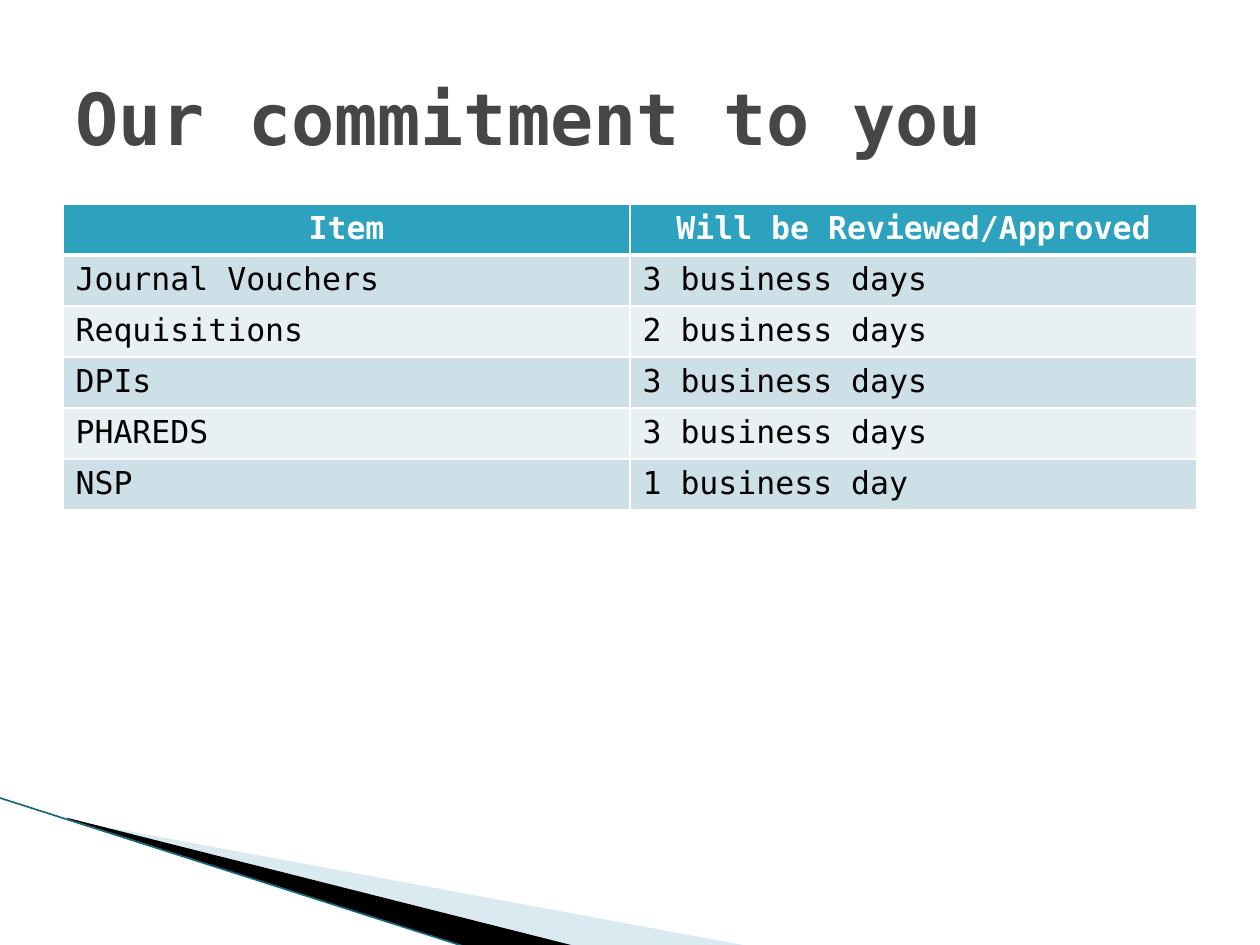
from dataclasses import dataclass

from lxml import etree
from pptx import Presentation
from pptx.dml.color import RGBColor
from pptx.enum.shapes import MSO_CONNECTOR
from pptx.enum.text import MSO_ANCHOR, PP_ALIGN
from pptx.oxml.ns import qn
from pptx.util import Inches, Pt

STRAIGHT = MSO_CONNECTOR.STRAIGHT
MIDDLE = MSO_ANCHOR.MIDDLE
CENTER = PP_ALIGN.CENTER
LEFT = PP_ALIGN.LEFT


@dataclass(frozen=True)
class Theme:
    font: str = "DejaVu Sans Mono"
    title_size: float = 41
    table_size: float = 18
    title: str = "464646"
    header: str = "2DA2BF"
    header_text: str = "FFFFFF"
    body_text: str = "000000"
    odd_row: str = "CDE0E8"
    even_row: str = "E8F0F4"
    border: str = "FFFFFF"
    light_wedge: str = "A0CBDC"
    dark_wedge: str = "000000"
    edge: str = "16697A"


THEME = Theme()
THIN, THICK = 1, 3

COMMITMENTS = [
    ("Item", "Will be Reviewed/Approved"),
    ("Journal Vouchers", "3 business days"),
    ("Requisitions", "2 business days"),
    ("DPIs", "3 business days"),
    ("PHAREDS", "3 business days"),
    ("NSP", "1 business day"),
]


def color(value):
    return RGBColor.from_string(value)


def format_text(paragraph, size, text_color, bold, alignment=LEFT):
    paragraph.alignment = alignment
    for run in paragraph.runs:
        run.font.name = THEME.font
        run.font.size = Pt(size)
        run.font.bold = bold
        run.font.color.rgb = color(text_color)


def add_wedge(slide, points, fill_color, opacity=100):
    corners = [(Inches(x), Inches(y)) for x, y in points]
    builder = slide.shapes.build_freeform(*corners[0])
    builder.add_line_segments(corners[1:], close=True)
    shape = builder.convert_to_shape()
    shape.shadow.inherit = False
    shape.line.fill.background()
    shape.fill.solid()
    shape.fill.fore_color.rgb = color(fill_color)
    if opacity < 100:
        fill = shape.fill._xPr.find(qn("a:solidFill"))
        etree.SubElement(fill[0], qn("a:alpha"), val=str(opacity * 1000))


def add_edge(slide, start, end):
    connector = slide.shapes.add_connector(
        STRAIGHT, *(Inches(value) for value in start + end))
    connector.line.color.rgb = color(THEME.edge)
    connector.line.width = Pt(0.95)
    etree.SubElement(connector._element.spPr, qn("a:effectLst"))


def add_title(slide, text):
    box = slide.shapes.add_textbox(Inches(0.5), Inches(0.3), Inches(9), Inches(1.25))
    frame = box.text_frame
    frame.word_wrap = True
    frame.vertical_anchor = MIDDLE
    frame.text = text
    format_text(frame.paragraphs[0], THEME.title_size, THEME.title, True)


def set_borders(cell, top, bottom):
    properties = cell._tc.get_or_add_tcPr()
    for side, width in (("L", THIN), ("R", THIN), ("T", top), ("B", bottom)):
        line = etree.SubElement(properties, qn(f"a:ln{side}"), w=str(Pt(width)))
        fill = etree.SubElement(line, qn("a:solidFill"))
        etree.SubElement(fill, qn("a:srgbClr"), val=THEME.border)


def fill_cell(cell, text, row):
    header = row == 0
    set_borders(cell, THICK if row == 1 else THIN, THICK if header else THIN)
    band = THEME.odd_row if row % 2 else THEME.even_row
    cell.fill.solid()
    cell.fill.fore_color.rgb = color(THEME.header if header else band)
    cell.text_frame.text = text
    format_text(cell.text_frame.paragraphs[0], THEME.table_size,
                THEME.header_text if header else THEME.body_text,
                header, CENTER if header else LEFT)


def add_commitment_table(slide, records):
    table = slide.shapes.add_table(
        len(records), len(records[0]),
        Inches(0.5), Inches(1.62), Inches(9), Inches(2.43)).table
    for row, record in enumerate(records):
        for column, text in enumerate(record):
            fill_cell(table.cell(row, column), text, row)


def main():
    presentation = Presentation()
    presentation.slide_width = Inches(10)
    presentation.slide_height = Inches(7.5)
    slide = presentation.slides.add_slide(presentation.slide_layouts[6])
    add_wedge(slide, [(0.55, 6.51), (5.95, 7.51), (4.56, 7.51), (0.55, 6.5)],
              THEME.light_wedge, 40)
    add_wedge(slide, [(0.53, 6.49), (4.57, 7.51), (3.72, 7.52), (0.54, 6.5)],
              THEME.dark_wedge)
    add_edge(slide, (-0.01, 6.33), (3.71, 7.52))
    add_commitment_table(slide, COMMITMENTS)
    add_title(slide, "Our commitment to you")
    presentation.save("out.pptx")


if __name__ == "__main__":
    main()
